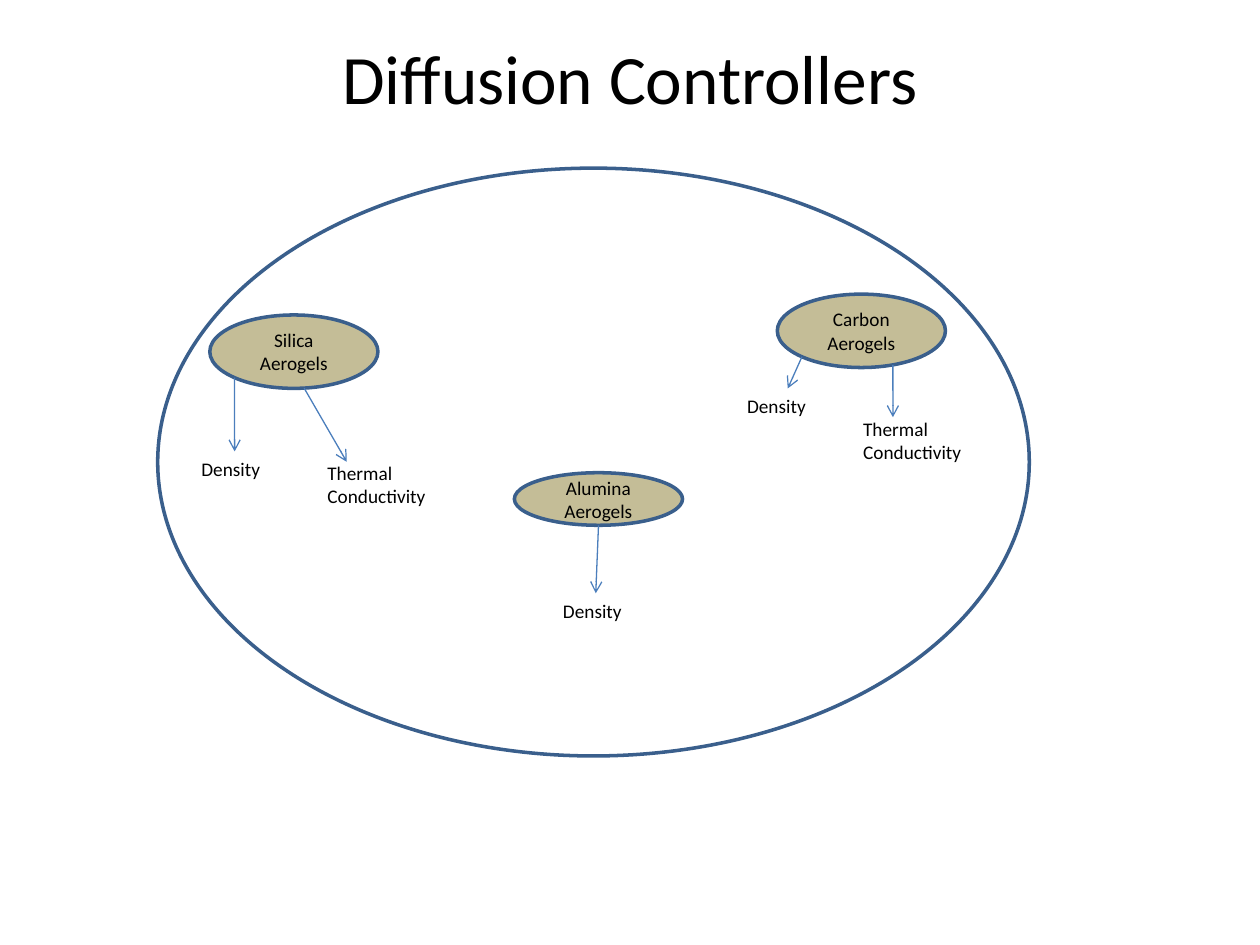
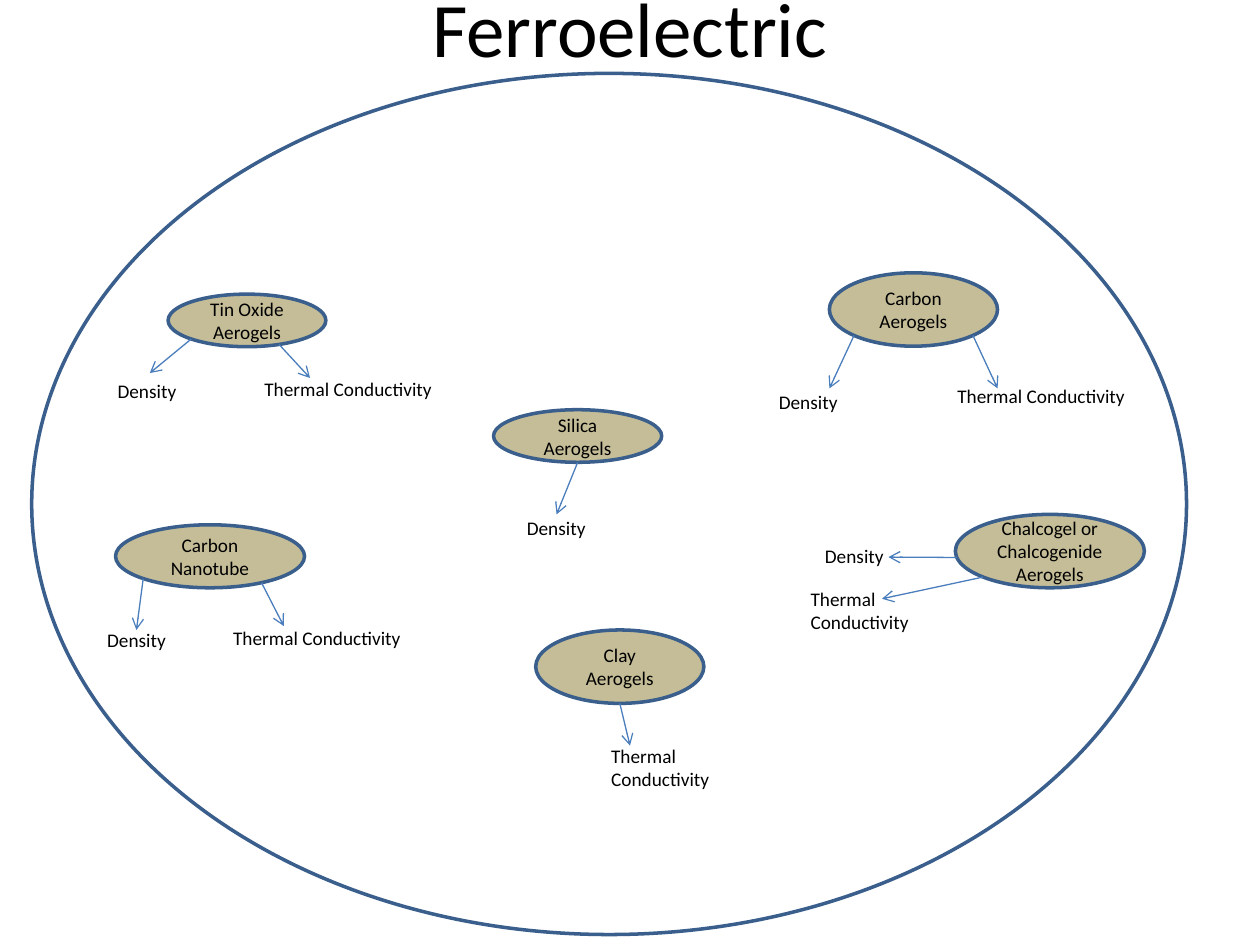
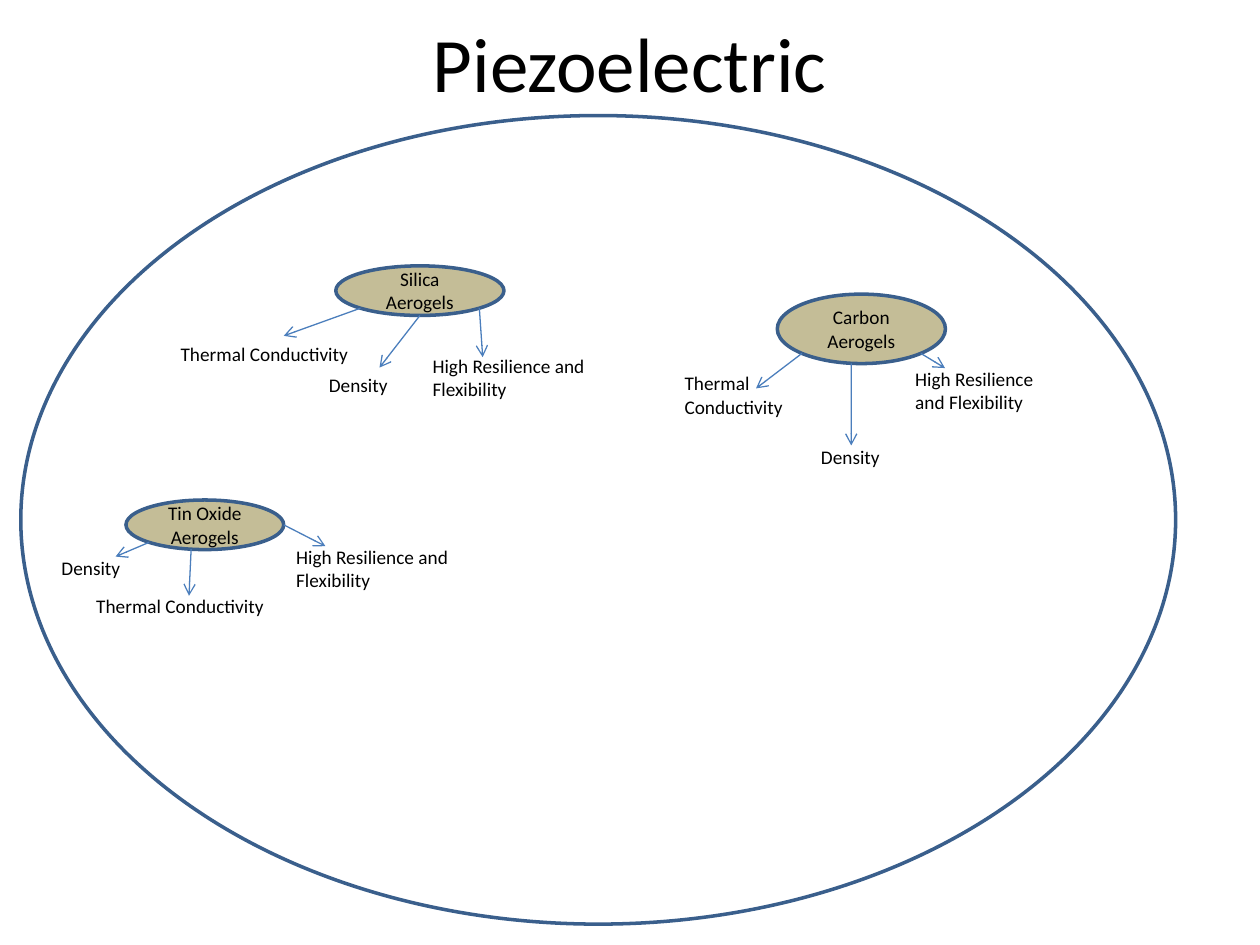
"""Draw three maps of aerogels and the properties that qualify them, one per device type."""
from math import cos, radians, sin

from lxml.etree import SubElement
from pptx import Presentation
from pptx.dml.color import RGBColor
from pptx.enum.shapes import MSO_CONNECTOR, MSO_SHAPE
from pptx.enum.text import MSO_ANCHOR, MSO_AUTO_SIZE, PP_ALIGN
from pptx.oxml.ns import qn
from pptx.util import Cm, Pt

COLORS = {
    "background": "FFFFFF",
    "aerogel": "C4BD97",
    "outline": "3A5F8C",
    "arrow": "4B7EBC",
    "text": "000000",
}
FONT = "Calibri"
LABEL_SIZE = 11
LABEL_HEIGHTS = {1: 0.74, 2: 1.19}

DENSITY = "Density"
THERMAL = "Thermal Conductivity"
RESILIENCE = "High Resilience and Flexibility"

# Aerogel: name, (left, top, width, height), properties.
# Property: text, lines, (left, top, width), angle on the ellipse, arrow tip.
SLIDES = [
    {
        "title": ("Diffusion Controllers", 0.76, 1.57, 39.6),
        "ring": (3.18, 3.39, 17.57, 11.85),
        "aerogels": [
            ("Alumina Aerogels", (10.37, 9.53, 3.39, 1.06), [
                (DENSITY, 1, (11.1, 11.96, 1.8), 90, (12.01, 11.96)),
            ]),
            ("Carbon Aerogels", (15.67, 5.93, 3.39, 1.48), [
                (DENSITY, 1, (14.81, 7.83, 1.91), 135, (15.88, 7.83)),
                (THERMAL, 2, (17.15, 8.28, 2.96), 68, (18, 8.41)),
            ]),
            ("Silica Aerogels", (4.23, 6.35, 3.39, 1.48), [
                (DENSITY, 1, (3.81, 9.1, 2.54), 135, (4.73, 9.1)),
                (THERMAL, 2, (6.35, 9.17, 2.54), 83, (6.99, 9.31)),
            ]),
        ],
    },
    {
        "title": ("Ferroelectric", -1.06, 3.18, 44),
        "ring": (0.64, 1.48, 23.28, 17.36),
        "aerogels": [
            ("Silica Aerogels", (9.95, 8.26, 3.39, 1.06), [
                (DENSITY, 1, (10.37, 10.28, 2.54), 90, (11.22, 10.37)),
            ]),
            ("Tin Oxide Aerogels", (3.39, 5.93, 3.18, 1.06), [
                (DENSITY, 1, (2.12, 7.52, 1.8), 135, (3.02, 7.52)),
                (THERMAL, 1, (5.08, 7.49, 4.66), 66, (6.25, 7.62)),
            ]),
            ("Carbon Aerogels", (16.72, 5.5, 3.39, 1.48), [
                (DENSITY, 1, (15.45, 7.75, 1.91), 135, (16.72, 7.83)),
                (THERMAL, 1, (19.05, 7.62, 4.02), 45, (20.11, 7.83)),
            ]),
            ("Chalcogel or Chalcogenide Aerogels", (19.26, 10.37, 3.81, 1.48), [
                (DENSITY, 1, (16.38, 10.85, 2.03), 170, (17.91, 11.23)),
                (THERMAL, 2, (16.09, 11.71, 2.54), 135, (17.78, 12.07)),
            ]),
            ("Carbon Nanotube", (2.33, 10.58, 3.81, 1.27), [
                (DENSITY, 1, (1.91, 12.55, 1.8), 135, (2.75, 12.7)),
                (THERMAL, 1, (4.45, 12.5, 4.23), 57, (5.72, 12.62)),
            ]),
            ("Clay Aerogels", (10.8, 12.7, 3.39, 1.48), [
                (THERMAL, 2, (12.07, 14.88, 2.54), 90, (12.7, 15.03)),
            ]),
        ],
    },
    {
        "title": ("Piezoelectric", 0.15, 2.2, 44),
        "ring": (0.42, 2.33, 23.28, 16.3),
        "aerogels": [
            ("Silica Aerogels", (6.77, 5.36, 3.39, 1), [
                (THERMAL, 1, (3.39, 6.77, 4.02), 135, (5.72, 6.77)),
                (DENSITY, 1, (6.38, 7.41, 2.54), 90, (7.65, 7.41)),
                (RESILIENCE, 2, (8.47, 7.01, 3.6), 45, (9.73, 7.2)),
            ]),
            ("Tin Oxide Aerogels", (2.54, 10.08, 3.18, 1), [
                (DENSITY, 1, (0.99, 11.08, 1.8), 135, (2.33, 11.22)),
                (THERMAL, 1, (1.69, 11.86, 4.23), 100, (3.81, 12.01)),
                (RESILIENCE, 2, (5.72, 10.87, 4.23), 0, (6.56, 11.01)),
            ]),
            ("Carbon Aerogels", (15.67, 5.93, 3.39, 1.4), [
                (THERMAL, 2, (13.55, 7.37, 2.54), 135, (15.24, 7.83)),
                (DENSITY, 1, (16.3, 8.85, 1.91), 97, (17.16, 8.98)),
                (RESILIENCE, 2, (18.2, 7.28, 3.18), 45, (19.05, 7.42)),
            ]),
        ],
    },
]


class AerogelMap:
    """Hold the shared style and the slide being drawn."""

    def __init__(self, presentation):
        self.presentation = presentation
        self.slide = None

    def add_slide(self):
        """Start a blank slide."""
        self.slide = self.presentation.slides.add_slide(self.presentation.slide_layouts[6])

    def color(self, name):
        """Return a named colour."""
        return RGBColor.from_string(COLORS[name])

    def set_text(self, shape, text, size=LABEL_SIZE, alignment=PP_ALIGN.LEFT, anchor=MSO_ANCHOR.TOP):
        """Put formatted text in a shape."""
        frame = shape.text_frame
        frame.text = text
        frame.word_wrap = True
        frame.vertical_anchor = anchor
        paragraph = frame.paragraphs[0]
        paragraph.alignment = alignment
        font = paragraph.runs[0].font
        font.name = FONT
        font.size = Pt(size)
        font.color.rgb = self.color("text")

    def title(self, text, top, height, size):
        """Add the centred slide title."""
        shape = self.slide.shapes.add_textbox(Cm(1.27), Cm(top), Cm(22.86), Cm(height))
        self.set_text(shape, text, size, PP_ALIGN.CENTER, MSO_ANCHOR.MIDDLE)

    def ellipse(self, box, fill, text=None):
        """Add an outlined ellipse with optional centred text."""
        shape = self.slide.shapes.add_shape(MSO_SHAPE.OVAL, *map(Cm, box))
        shape.shadow.inherit = False
        shape.fill.solid()
        shape.fill.fore_color.rgb = self.color(fill)
        shape.line.color.rgb = self.color("outline")
        shape.line.width = Pt(2)
        if text:
            self.set_text(shape, text, alignment=PP_ALIGN.CENTER, anchor=MSO_ANCHOR.MIDDLE)

    def label(self, text, lines, left, top, width):
        """Add a property label."""
        height = LABEL_HEIGHTS[lines]
        shape = self.slide.shapes.add_textbox(Cm(left), Cm(top), Cm(width), Cm(height))
        self.set_text(shape, text)
        shape.text_frame.auto_size = MSO_AUTO_SIZE.SHAPE_TO_FIT_TEXT

    def arrow(self, box, angle, tip):
        """Add an arrow from the point at an angle on an ellipse to a tip."""
        left, top, width, height = box
        start = (
            left + width / 2 * (1 + cos(radians(angle))),
            top + height / 2 * (1 + sin(radians(angle))),
        )
        connector = self.slide.shapes.add_connector(
            MSO_CONNECTOR.STRAIGHT, *map(Cm, start + tip)
        )
        connector.line.color.rgb = self.color("arrow")
        connector.line.width = Pt(0.75)
        properties = connector._element.spPr
        SubElement(properties.find(qn("a:ln")), qn("a:tailEnd"), type="arrow")
        SubElement(properties, qn("a:effectLst"))

    def aerogel(self, name, box, properties):
        """Add an aerogel with its arrows and property labels."""
        self.ellipse(box, "aerogel", name)
        for text, lines, place, angle, tip in properties:
            self.label(text, lines, *place)
            self.arrow(box, angle, tip)


def main():
    """Build and save the presentation."""
    presentation = Presentation()
    presentation.slide_width = Cm(25.4)
    presentation.slide_height = Cm(19.05)
    aerogel_map = AerogelMap(presentation)
    for content in SLIDES:
        aerogel_map.add_slide()
        aerogel_map.ellipse(content["ring"], "background")
        for aerogel in content["aerogels"]:
            aerogel_map.aerogel(*aerogel)
        aerogel_map.title(*content["title"])
    presentation.save("out.pptx")


if __name__ == "__main__":
    main()
